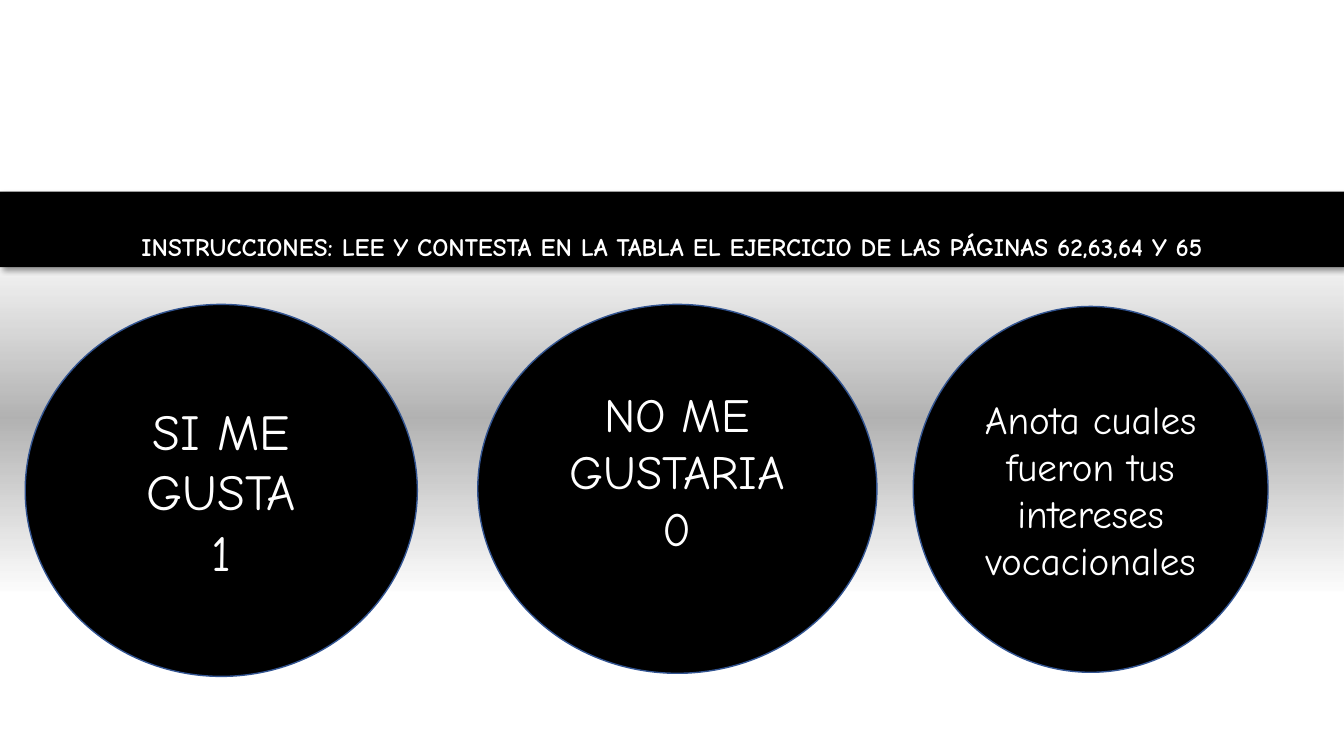
"""Builds the vocational interests instruction slide."""
import dataclasses

import lxml.etree
import pptx
import pptx.dml.color
import pptx.enum.shapes
import pptx.enum.text
import pptx.oxml.ns
import pptx.util

Pt = pptx.util.Pt
FONT = "Comic Neue"
COLOURS = {"black": "000000", "white": "FFFFFF", "outline": "325491"}
GLOW_STOPS = {0: 0, 25: 15, 50: 30, 75: 15, 100: 0}


@dataclasses.dataclass(frozen=True)
class Circle:
    """A black circle with its lines of text, in points."""
    left: float
    top: float
    width: float
    height: float
    lines: tuple[str, ...]
    size: float
    bottom_margin: float = 3.6


CIRCLES = (
    Circle(18, 217.44, 280.08, 265.68, ("SI ME GUSTA", "1"), 36),
    Circle(341.28, 217.44, 285.12, 263.52, ("NO ME GUSTARIA", "0"), 34, 29.6),
    Circle(652.32, 218.88, 253.44, 261.36,
           ("Anota cuales fueron tus intereses vocacionales",), 28),
)


def colour(name: str) -> pptx.dml.color.RGBColor:
    """Return a named colour."""
    return pptx.dml.color.RGBColor.from_string(COLOURS[name])


def add_node(parent, tag: str, **attributes):
    """Append a drawing element to its parent."""
    node = lxml.etree.SubElement(parent, pptx.oxml.ns.qn(f"a:{tag}"))
    for key, value in attributes.items():
        node.set(key, str(value))
    return node


def add_black(parent, opacity: int) -> None:
    """Append black at an opacity in percent."""
    black = add_node(parent, "srgbClr", val=COLOURS["black"])
    add_node(black, "alpha", val=opacity * 1000)


def write(para, text: str, *, size: float, bold: bool = False) -> None:
    """Write centred white text into a paragraph."""
    para.alignment = pptx.enum.text.PP_ALIGN.CENTER
    span = para.add_run()
    span.text = text
    span.font.name = FONT
    span.font.size = Pt(size)
    span.font.bold = bold
    span.font.color.rgb = colour("white")


def add_glow(page):
    """Add the soft grey gradient."""
    box = page.shapes.add_shape(pptx.enum.shapes.MSO_SHAPE.RECTANGLE,
                                Pt(0), Pt(173.52), Pt(960), Pt(249.12))
    box.shadow.inherit = False
    box.line.fill.background()
    box.fill.gradient()
    box.fill.gradient_angle = 90
    stops = box.element.spPr.find(".//" + pptx.oxml.ns.qn("a:gsLst"))
    for stop in list(stops):
        stops.remove(stop)
    for position, opacity in GLOW_STOPS.items():
        add_black(add_node(stops, "gs", pos=position * 1000), opacity)
    return box


def format_title(title) -> None:
    """Turn the title into the black instruction band."""
    title.left, title.top = Pt(0), Pt(136.8)
    title.width, title.height = Pt(960), Pt(54)
    title.fill.solid()
    title.fill.fore_color.rgb = colour("black")
    effects = add_node(title.element.spPr, "effectLst")
    shadow = add_node(effects, "outerShdw", blurRad=Pt(4), dist=Pt(3),
                      dir=45 * 60000, algn="tl", rotWithShape=0)
    add_black(shadow, 40)
    frame = title.text_frame
    frame.auto_size = pptx.enum.text.MSO_AUTO_SIZE.NONE
    frame.word_wrap = True
    frame.vertical_anchor = pptx.enum.text.MSO_ANCHOR.BOTTOM
    para = frame.paragraphs[0]
    para.line_spacing = 0.9
    para.space_after = Pt(6)
    write(para, "INSTRUCCIONES: LEE Y CONTESTA EN LA TABLA EL EJERCICIO "
                "DE LAS PÁGINAS 62,63,64 Y 65", size=18, bold=True)


def add_circle(page, circle: Circle) -> None:
    """Draw one circle and its text."""
    box = page.shapes.add_shape(
        pptx.enum.shapes.MSO_SHAPE.FLOWCHART_CONNECTOR,
        Pt(circle.left), Pt(circle.top), Pt(circle.width), Pt(circle.height))
    box.shadow.inherit = False
    box.fill.solid()
    box.fill.fore_color.rgb = colour("black")
    box.line.color.rgb = colour("outline")
    box.line.width = Pt(1)
    frame = box.text_frame
    frame.word_wrap = True
    frame.vertical_anchor = pptx.enum.text.MSO_ANCHOR.MIDDLE
    frame.margin_bottom = Pt(circle.bottom_margin)
    for index, line in enumerate(circle.lines):
        para = frame.add_paragraph() if index else frame.paragraphs[0]
        write(para, line, size=circle.size)


def main() -> None:
    """Build and save the deck."""
    deck = pptx.Presentation()
    deck.slide_width, deck.slide_height = Pt(960), Pt(540)
    page = deck.slides.add_slide(deck.slide_layouts.get_by_name("Title Only"))
    title = page.shapes.title
    format_title(title)
    title.element.addprevious(add_glow(page).element)
    for circle in CIRCLES:
        add_circle(page, circle)
    deck.save("out.pptx")


if __name__ == "__main__":
    main()
